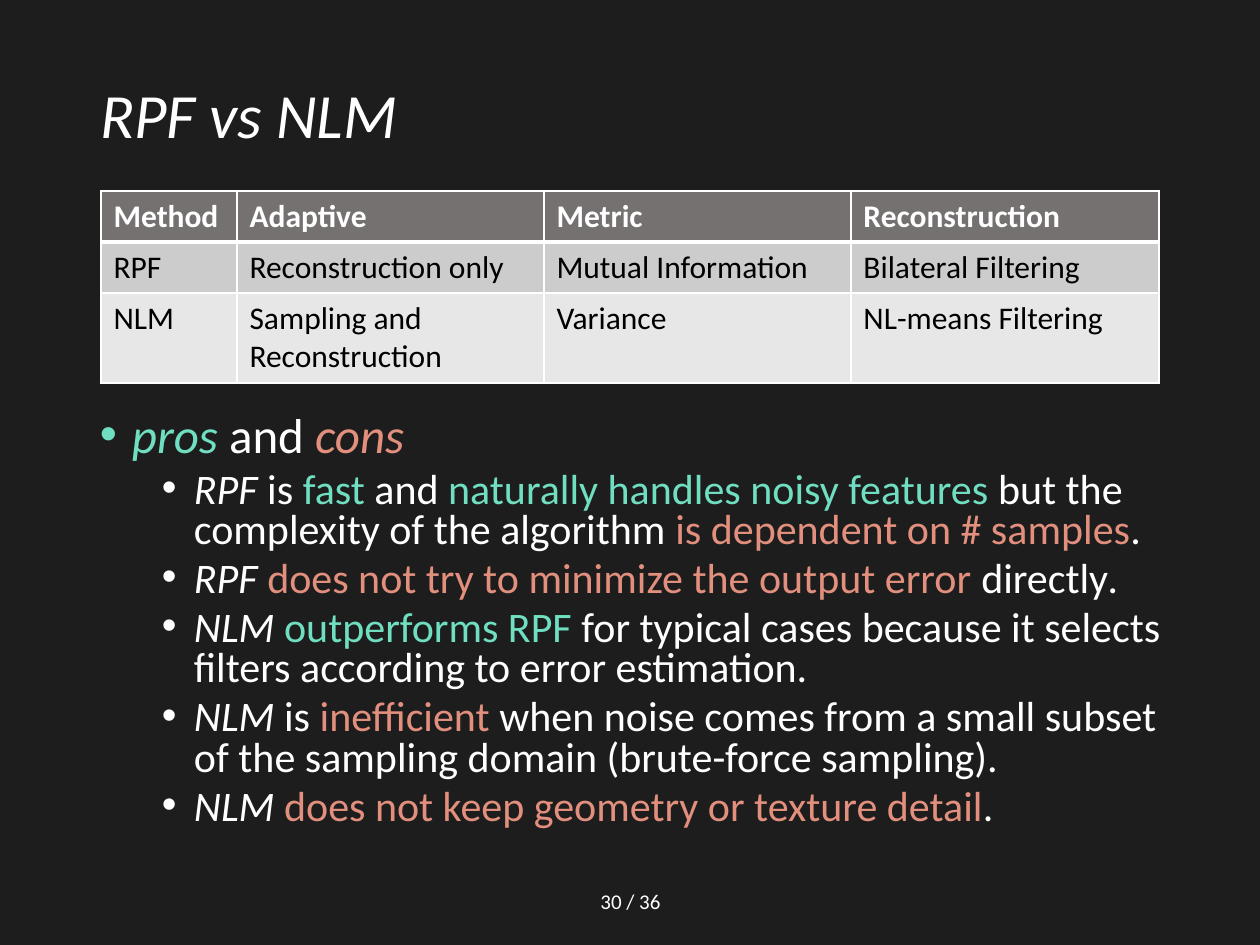
from lxml import etree
from pptx import Presentation
from pptx.dml.color import RGBColor
from pptx.enum.text import MSO_ANCHOR, MSO_AUTO_SIZE, PP_ALIGN
from pptx.oxml.ns import qn
from pptx.util import Pt

LEFT, CENTER = PP_ALIGN.LEFT, PP_ALIGN.CENTER
TOP, MIDDLE = MSO_ANCHOR.TOP, MSO_ANCHOR.MIDDLE
NO_AUTOFIT = MSO_AUTO_SIZE.NONE

PX = 914400 / 126
FONT = "Calibri"
BACKGROUND, WHITE, BLACK = "1D1D1D", "FFFFFF", "000000"
PRO, CON = "70DEC1", "E28F7D"
ROW_FILLS = ["767171", "CCCCCC", "E7E7E7"]

METHODS = [
    ["Method", "Adaptive", "Metric", "Reconstruction"],
    ["RPF", "Reconstruction only", "Mutual Information", "Bilateral Filtering"],
    ["NLM", "Sampling and Reconstruction", "Variance", "NL-means Filtering"],
]

# Each run is (text, colour, italic)
HEADING = [("pros", PRO, True), (" and ", WHITE, False), ("cons", CON, True)]
POINTS = [
    [("RPF", WHITE, True), (" is ", WHITE, False), ("fast", PRO, False),
     (" and ", WHITE, False), ("naturally handles noisy features", PRO, False),
     (" but the complexity of the algorithm ", WHITE, False),
     ("is dependent on # samples", CON, False), (".", WHITE, False)],
    [("RPF ", WHITE, True), ("does not try to minimize the output error ", CON, False),
     ("directly", WHITE, False), (".", WHITE, True)],
    [("NLM ", WHITE, True), ("outperforms RPF", PRO, False),
     (" for typical cases because it selects filters according to error estimation.",
      WHITE, False)],
    [("NLM", WHITE, True), (" is ", WHITE, False), ("inefficient", CON, False),
     (" when noise comes from a small subset of the sampling domain "
      "(brute-force sampling).", WHITE, False)],
    [("NLM ", WHITE, True), ("does not keep geometry or texture detail", CON, False),
     (".", WHITE, False)],
]


def px(length):
    return round(length * PX)


def rgb(color):
    return RGBColor.from_string(color)


def style_run(run, size, color, italic=False, bold=False):
    font = run.font
    font.name, font.size = FONT, Pt(size)
    font.italic, font.bold = italic, bold
    font.color.rgb = rgb(color)


def set_frame(frame, anchor):
    frame.word_wrap = True
    frame.auto_size = NO_AUTOFIT
    frame.vertical_anchor = anchor
    frame.margin_left = frame.margin_right = 0
    frame.margin_top = frame.margin_bottom = 0


def add_title(slide, left, top, width, height):
    title = slide.shapes.title
    title.left, title.top, title.width, title.height = map(px, (left, top, width, height))
    frame = title.text_frame
    set_frame(frame, MIDDLE)
    frame.text = "RPF vs NLM"
    paragraph = frame.paragraphs[0]
    paragraph.alignment, paragraph.line_spacing = LEFT, 0.9
    style_run(paragraph.runs[0], 36, WHITE, italic=True)


def set_borders(cell, widths):
    properties = cell._tc.get_or_add_tcPr()
    for index, (side, width) in enumerate(widths.items()):
        line = etree.Element(qn(f"a:ln{side}"), w=str(Pt(width)))
        fill = etree.SubElement(line, qn("a:solidFill"))
        etree.SubElement(fill, qn("a:srgbClr"), val=WHITE)
        properties.insert(index, line)


def add_method_table(slide, left, top, column_widths, row_heights):
    table = slide.shapes.add_table(
        len(METHODS), len(METHODS[0]), px(left), px(top),
        px(sum(column_widths)), px(sum(row_heights))).table
    for column, width in zip(table.columns, column_widths):
        column.width = px(width)
    for r, (row, height) in enumerate(zip(table.rows, row_heights)):
        row.height = px(height)
        header = r == 0
        borders = {"L": 1, "R": 1, "T": 3 if r == 1 else 1, "B": 3 if header else 1}
        for cell, text in zip(row.cells, METHODS[r]):
            cell.fill.solid()
            cell.fill.fore_color.rgb = rgb(ROW_FILLS[r])
            set_borders(cell, borders)
            cell.text_frame.text = text
            style_run(cell.text_frame.paragraphs[0].runs[0], 18,
                      WHITE if header else BLACK, bold=header)


def fill_bullet(paragraph, runs, size, indent, space_before):
    paragraph.line_spacing = 0.8
    paragraph.space_before = Pt(space_before)
    properties = paragraph._p.get_or_add_pPr()
    properties.set("marL", str(px(indent)))
    properties.set("indent", str(px(-32)))
    etree.SubElement(properties, qn("a:buFont"), typeface="Arial")
    etree.SubElement(properties, qn("a:buChar"), char="•")
    for text, color, italic in runs:
        run = paragraph.add_run()
        run.text = text
        style_run(run, size, color, italic)


def add_pros_and_cons(slide, left, top, width, height):
    frame = slide.shapes.add_textbox(*map(px, (left, top, width, height))).text_frame
    set_frame(frame, TOP)
    fill_bullet(frame.paragraphs[0], HEADING, 28, 32, 0)
    for point in POINTS:
        paragraph = frame.add_paragraph()
        paragraph.level = 1
        fill_bullet(paragraph, point, 24, 94, 5)


def add_page_count(slide, left, top, width, height):
    frame = slide.shapes.add_textbox(*map(px, (left, top, width, height))).text_frame
    set_frame(frame, MIDDLE)
    frame.text = "30 / 36"
    frame.paragraphs[0].alignment = CENTER
    style_run(frame.paragraphs[0].runs[0], 12, WHITE)


def main():
    presentation = Presentation()
    presentation.slide_width, presentation.slide_height = px(1260), px(945)
    slide = presentation.slides.add_slide(presentation.slide_layouts[5])
    slide.background.fill.solid()
    slide.background.fill.fore_color.rgb = rgb(BACKGROUND)

    add_title(slide, 100, 50, 1060, 136)
    add_pros_and_cons(slide, 100, 416, 1061, 436)
    add_method_table(slide, 101, 191, [136, 307, 307, 308], [51, 51, 90])
    add_page_count(slide, 489, 876, 283, 50)
    presentation.save("out.pptx")


if __name__ == "__main__":
    main()
